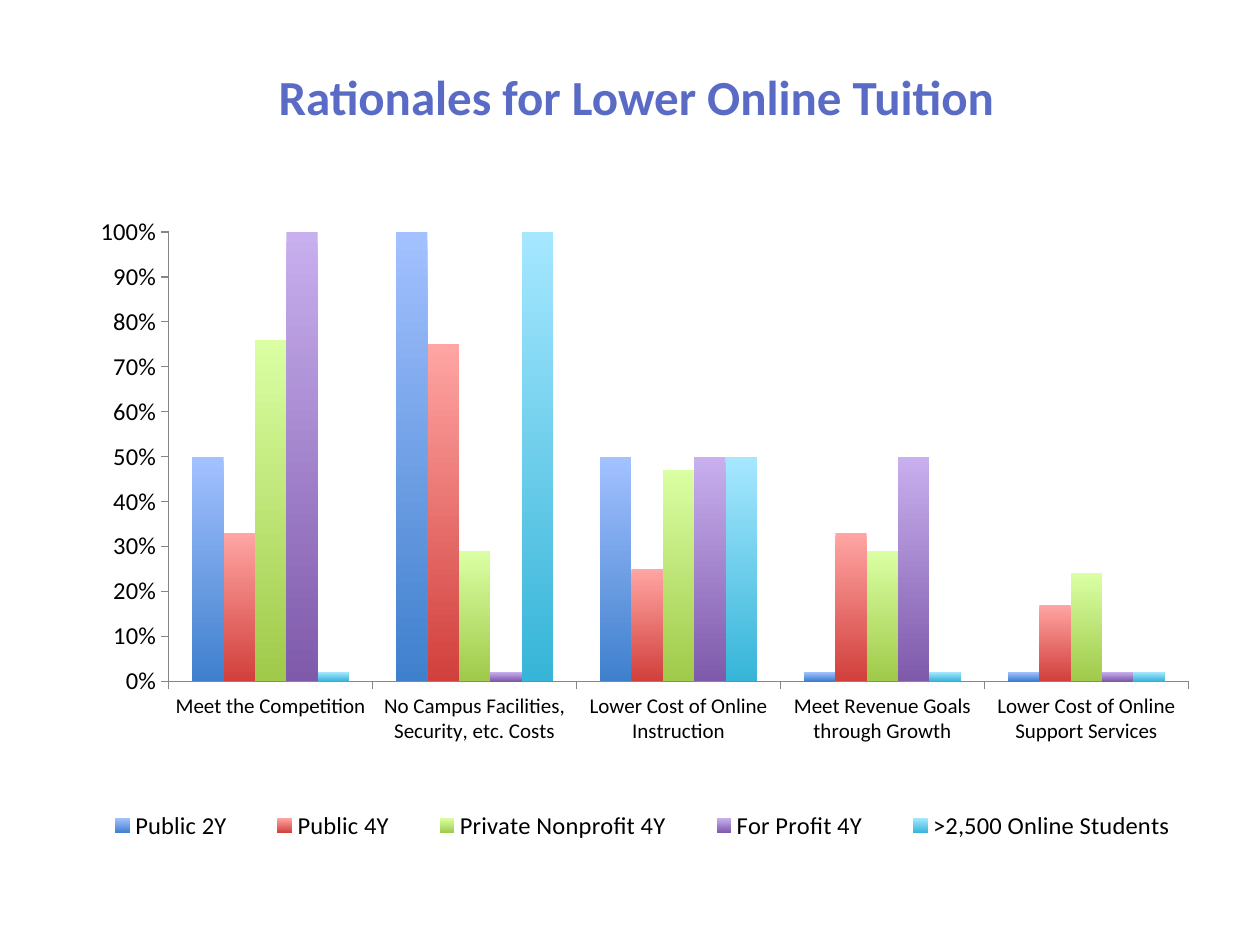
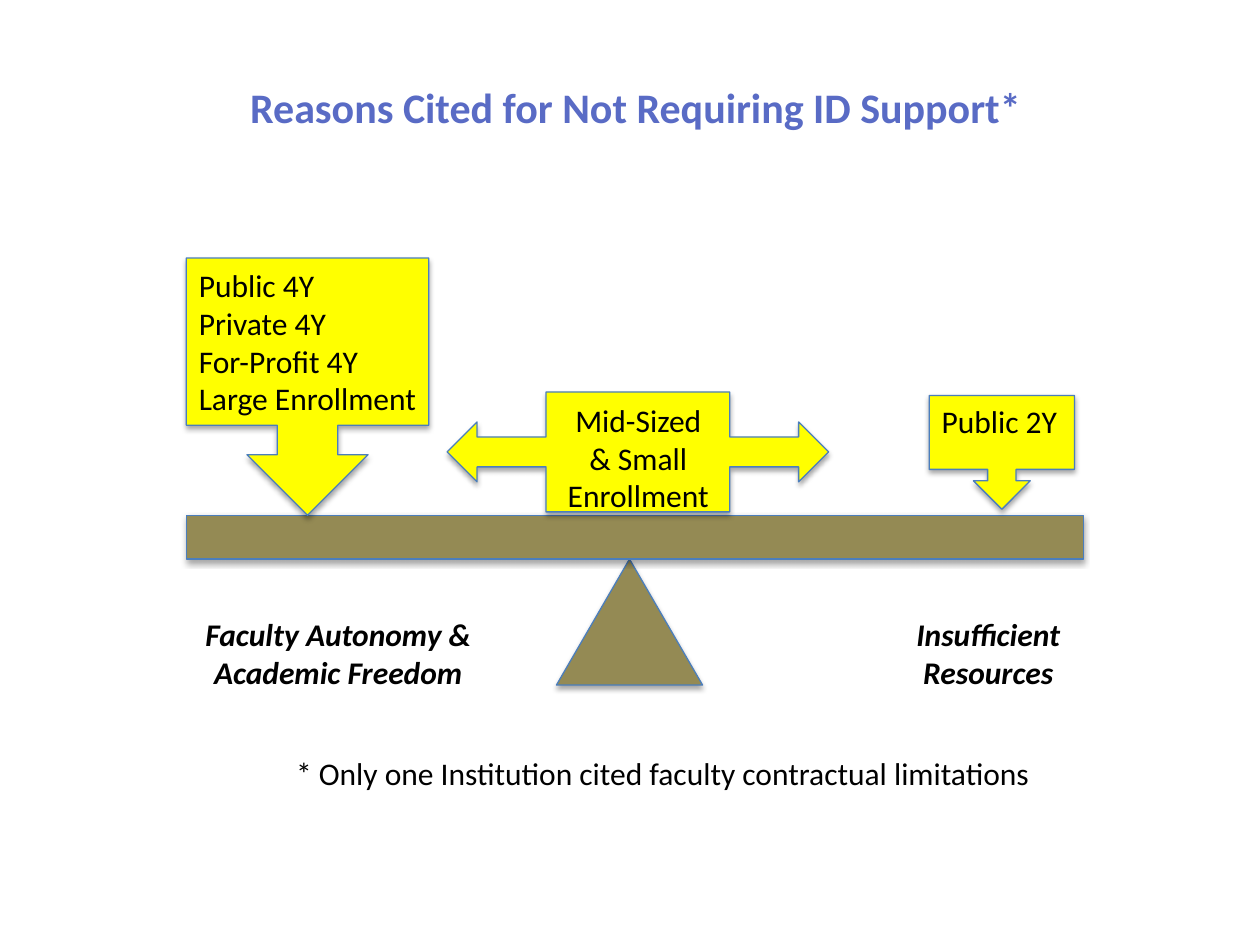
import lxml.etree
import pptx
import pptx.chart.data
import pptx.dml.color
import pptx.enum.chart
import pptx.enum.shapes
import pptx.enum.text
import pptx.oxml
import pptx.oxml.ns
import pptx.util

Pt = pptx.util.Pt
qn = pptx.oxml.ns.qn
SHAPE = pptx.enum.shapes.MSO_SHAPE
ALIGN = pptx.enum.text.PP_ALIGN
ANCHOR = pptx.enum.text.MSO_ANCHOR
XL = pptx.enum.chart

TITLE, BLACK, OUTLINE = "596BC5", "000000", "4B7EBC"
WOOD, YELLOW, AXIS = "948A54", "FFFF00", "868686"


def rgb(color):
    return pptx.dml.color.RGBColor.from_string(color)


def set_layout(parent, index, x, y, w, h, inner=False):
    """Place a chart part by fractions of the chart area."""
    for old in parent.findall(qn("c:layout")):
        parent.remove(old)
    layout = lxml.etree.Element(qn("c:layout"))
    manual = lxml.etree.SubElement(layout, qn("c:manualLayout"))
    values = [("layoutTarget", "inner")] if inner else []
    values += [("xMode", "edge"), ("yMode", "edge"),
               ("x", x), ("y", y), ("w", w), ("h", h)]
    for tag, value in values:
        lxml.etree.SubElement(manual, qn("c:" + tag)).set("val", str(value))
    parent.insert(index, layout)


class Deck:
    font = "Calibri"

    def __init__(self):
        self.prs = pptx.Presentation()
        self.prs.slide_width, self.prs.slide_height = Pt(720), Pt(540)
        self.s = None

    def slide(self):
        self.s = self.prs.slides.add_slide(self.prs.slide_layouts[6])

    def style(self, font, size, color=BLACK, bold=False, italic=False):
        font.name, font.size = self.font, Pt(size)
        font.bold, font.italic = bold, italic
        font.color.rgb = rgb(color)

    def add_lines(self, sp, lines, align, anchor=ANCHOR.TOP, size=18, **look):
        tf = sp.text_frame
        tf.word_wrap = True
        tf.vertical_anchor = anchor
        for i, line in enumerate(lines):
            p = tf.add_paragraph() if i else tf.paragraphs[0]
            p.alignment = align
            r = p.add_run()
            r.text = line
            self.style(r.font, size, **look)

    def text(self, box, lines, align=ALIGN.CENTER, **look):
        sp = self.s.shapes.add_textbox(*map(Pt, box))
        self.add_lines(sp, lines, align, **look)

    def title(self, box, words, size):
        self.text(box, [words], anchor=ANCHOR.MIDDLE, size=size,
                  color=TITLE, bold=True)

    def shape(self, kind, box, fill):
        sp = self.s.shapes.add_shape(kind, *map(Pt, box))
        sp.fill.solid()
        sp.fill.fore_color.rgb = rgb(fill)
        sp.line.color.rgb = rgb(OUTLINE)
        sp.line.width = Pt(0.75)
        # Soft shadow straight below
        sp.shadow.inherit = False
        effects = sp._element.spPr.find(qn("a:effectLst"))
        shadow = lxml.etree.SubElement(
            effects, qn("a:outerShdw"), blurRad=str(Pt(3.1)),
            dist=str(Pt(1.8)), dir="5400000", rotWithShape="0")
        color = lxml.etree.SubElement(shadow, qn("a:srgbClr"), val=BLACK)
        lxml.etree.SubElement(color, qn("a:alpha"), val="35000")
        return sp

    def axis(self, axis, size):
        axis.has_major_gridlines = False
        axis.major_tick_mark = XL.XL_TICK_MARK.OUTSIDE
        axis.minor_tick_mark = XL.XL_TICK_MARK.NONE
        axis.format.line.color.rgb = rgb(AXIS)
        axis.format.line.width = Pt(0.75)
        self.style(axis.tick_labels.font, size)

    def column_chart(self, box, categories, series):
        data = pptx.chart.data.CategoryChartData(number_format="0%")
        data.categories = categories
        for name, values, _, _ in series:
            data.add_series(name, values)
        chart = self.s.shapes.add_chart(
            XL.XL_CHART_TYPE.COLUMN_CLUSTERED, *map(Pt, box), data).chart
        chart.has_title = False
        self.style(chart.font, 18)

        plot = chart.plots[0]
        plot.gap_width, plot.overlap = 150, 0
        plot.vary_by_categories = False
        for ser, (_, _, top, bottom) in zip(plot.series, series):
            fill = ser.format.fill
            fill.gradient()
            fill.gradient_angle = 270
            for stop, color, place in zip(fill.gradient_stops,
                                          (top, bottom), (0, 1)):
                stop.color.rgb = rgb(color)
                stop.position = place
            ser.format.line.fill.background()

        self.axis(chart.category_axis, 12)
        self.axis(chart.value_axis, 14)
        value_axis = chart.value_axis
        value_axis.minimum_scale, value_axis.maximum_scale = 0, 1
        value_axis.major_unit = 0.1
        value_axis.tick_labels.number_format = "0%"
        value_axis.tick_labels.number_format_is_linked = False

        chart.has_legend = True
        legend = chart.legend
        legend.position = XL.XL_LEGEND_POSITION.BOTTOM
        legend.include_in_layout = False
        self.style(legend.font, 14)
        set_layout(legend._element, 1, 0.03, 0.9, 0.95, 0.09)
        set_layout(plot._element.getparent(), 0, 0.11, 0.02, 0.85, 0.7,
                   inner=True)


def tuition_slide(deck):
    deck.slide()
    deck.title((81.5, 26.5, 564, 57), "Rationales for Lower Online Tuition", 28)
    categories = ["Meet the Competition",
                  "No Campus Facilities, Security, etc. Costs",
                  "Lower Cost of Online Instruction",
                  "Meet Revenue Goals through Growth",
                  "Lower Cost of Online Support Services"]
    # Name, values, top and bottom colour of the columns
    series = [
        ("Public 2Y", (0.5, 1, 0.5, 0.02, 0.02), "A3C1FF", "3F80CD"),
        ("Public 4Y", (0.33, 0.75, 0.25, 0.33, 0.17), "FFA5A3", "D1403C"),
        ("Private Nonprofit 4Y", (0.76, 0.29, 0.47, 0.29, 0.24),
         "DAFFA3", "A0CA4A"),
        ("For Profit 4Y", (1, 0.02, 0.5, 0.5, 0.02), "C8AFEE", "7F5AAB"),
        (">2,500 Online Students", (0.02, 1, 0.5, 0.02, 0.02),
         "A6E7FF", "36B5D8"),
    ]
    deck.column_chart((21, 124, 685.5, 368), categories, series)


def balance_slide(deck):
    deck.slide()
    deck.title((126, 46, 474.5, 30),
               "Reasons Cited for Not Requiring ID Support*", 24)
    left = 106.5

    # Seesaw
    deck.shape(SHAPE.ISOSCELES_TRIANGLE, (318, 319.5, 83.5, 72), WOOD)
    deck.shape(SHAPE.RECTANGLE, (left, 294.5, 512.5, 25), WOOD)

    # Reasons under each end
    for x, w, reason in ((left, 173.5, "Faculty Autonomy & Academic Freedom"),
                         (510.5, 108.5, "Insufficient Resources")):
        deck.text((x, 348, w, 51), [reason], bold=True, italic=True)

    # Weights on the beam
    deck.shape(SHAPE.DOWN_ARROW_CALLOUT, (left, 147.5, 138.5, 147), YELLOW)
    small = deck.shape(SHAPE.DOWN_ARROW_CALLOUT, (531, 226, 83, 65), YELLOW)
    deck.add_lines(small, ["Public 2Y"], ALIGN.LEFT)
    deck.text((left, 148.5, 148.5, 94.5),
              ["Public 4Y", "Private 4Y", "For-Profit 4Y", "Large Enrollment"],
              ALIGN.LEFT)
    deck.shape(SHAPE.LEFT_RIGHT_ARROW_CALLOUT, (255.5, 224, 218, 68.5), YELLOW)
    deck.text((309, 225.5, 111.5, 72.5), ["Mid-Sized", "& Small", "Enrollment"])

    # Footnote
    deck.text((103, 427.5, 551.5, 29),
              ["* Only one Institution cited faculty contractual limitations"])


def main():
    deck = Deck()
    tuition_slide(deck)
    balance_slide(deck)
    deck.prs.save("out.pptx")


if __name__ == "__main__":
    main()
